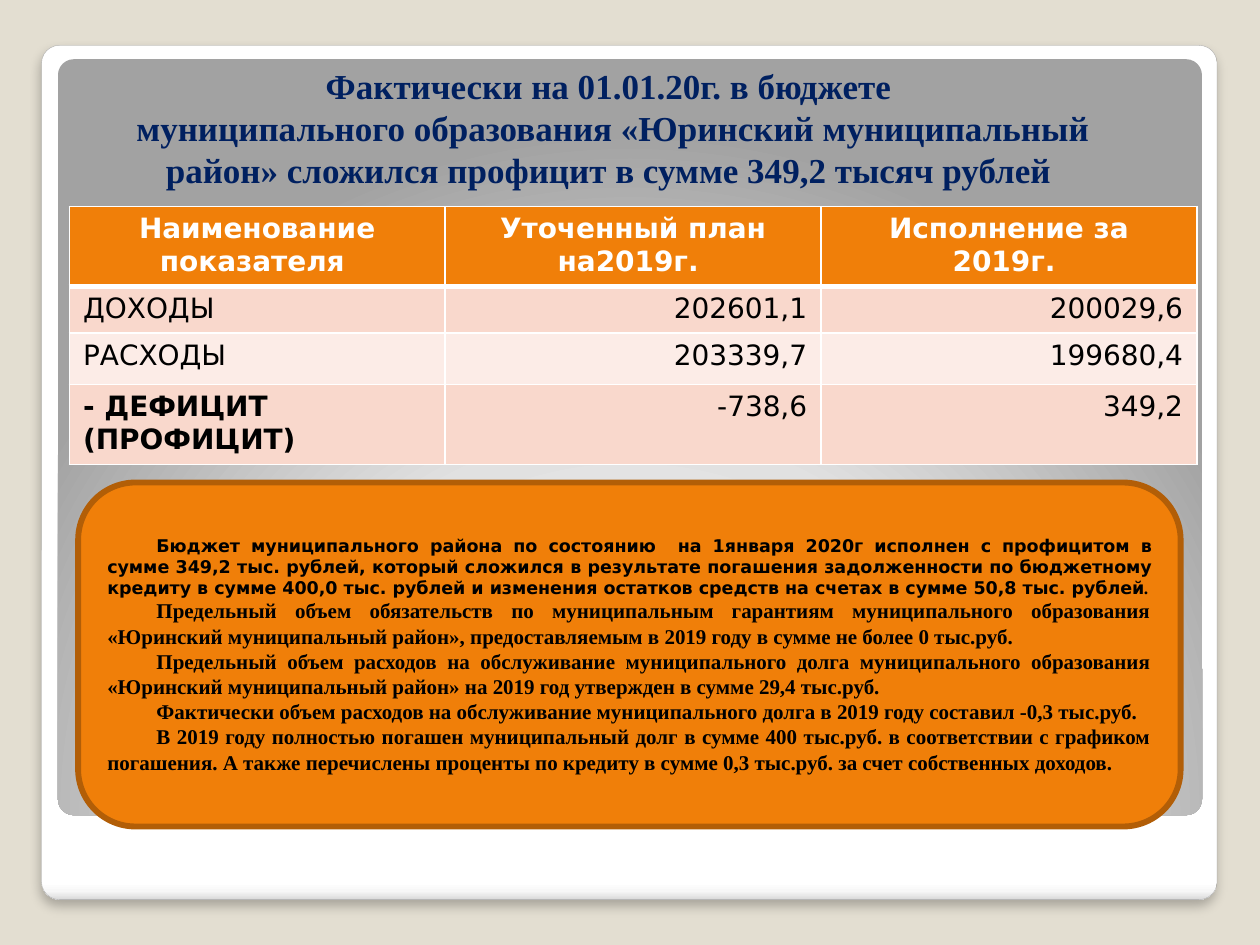
from lxml import etree
from pptx import Presentation
from pptx import util as u
from pptx.dml.color import RGBColor
from pptx.enum import shapes, text
from pptx.oxml import parse_xml
from pptx.oxml.ns import nsdecls, qn

COLORS = {
    "backdrop": "E3DED1", "white": "FFFFFF", "black": "000000", "navy": "002060",
    "orange": "F07F09", "rust": "B25E07", "band": "F9D8CC", "pale": "FCECE7",
    "edge": "A4A4A4",
}
SERIF, SANS = "Times New Roman", "DejaVu Sans"
LEFT, CENTER = text.PP_ALIGN.LEFT, text.PP_ALIGN.CENTER
RIGHT, JUSTIFY = text.PP_ALIGN.RIGHT, text.PP_ALIGN.JUSTIFY

TITLE = ("Фактически на 01.01.20г. в бюджете \nмуниципального образования «Юринский "
         "муниципальный район» сложился профицит в сумме 349,2 тысяч рублей ")
BUDGET = [
    ["Наименование показателя ", "Уточенный план на2019г. ", "Исполнение за 2019г. "],
    ["ДОХОДЫ", "202601,1", "200029,6"],
    ["РАСХОДЫ", "203339,7", "199680,4"],
    ["- ДЕФИЦИТ\n(ПРОФИЦИТ)", "-738,6", "349,2"],
]
ROW_HEIGHTS = [0.63, 0.37, 0.41, 0.63]
ROW_FILLS = ["orange", "band", "pale", "band"]
SUMMARY = (
    "Бюджет муниципального района по состоянию  на 1января 2020г исполнен с профицитом "
    "в сумме 349,2 тыс. рублей, который сложился в результате погашения задолженности по "
    "бюджетному кредиту в сумме 400,0 тыс. рублей и изменения остатков средств на счетах "
    "в сумме 50,8 тыс. рублей")
DEBT_NOTES = [
    "Предельный объем обязательств по муниципальным гарантиям муниципального образования "
    "«Юринский муниципальный район», предоставляемым в 2019 году в сумме не более 0 тыс.руб.",
    "Предельный объем расходов на обслуживание муниципального долга муниципального "
    "образования «Юринский муниципальный район» на 2019 год утвержден в сумме 29,4 тыс.руб. ",
    "Фактически объем расходов на обслуживание муниципального долга в 2019 году "
    "составил -0,3 тыс.руб.",
    "В 2019 году полностью погашен муниципальный долг в сумме 400 тыс.руб. в соответствии "
    "с графиком погашения. А также перечислены проценты по кредиту в сумме 0,3 тыс.руб. "
    "за счет собственных доходов. ",
]


def rgb(name):
    return RGBColor.from_string(COLORS[name])


def write(paragraph, words, size=12, font=SERIF, color="black", bold=True,
          align=LEFT, indent=0):
    paragraph.alignment = align
    if indent:
        properties = paragraph._p.get_or_add_pPr()
        properties.set("marL", "0")
        properties.set("indent", str(u.Inches(indent)))
    for number, line in enumerate(words.split("\n")):
        if number:
            paragraph.add_line_break()
        run = paragraph.add_run()
        run.text = line
        run.font.size = u.Pt(size)
        run.font.name = font
        run.font.bold = bold
        run.font.color.rgb = rgb(color)


def add_rounded(slide, left, top, width, height, corner=None):
    panel = slide.shapes.add_shape(
        shapes.MSO_SHAPE.ROUNDED_RECTANGLE,
        u.Inches(left), u.Inches(top), u.Inches(width), u.Inches(height))
    panel.shadow.inherit = False
    panel.line.fill.background()
    if corner is not None:
        panel.adjustments[0] = corner
    return panel


def fill_gradient(panel, stops, direction):
    panel.fill.background()
    marks = "".join(f'<a:gs pos="{place * 1000}"><a:srgbClr val="{shade}"/></a:gs>'
                    for place, shade in stops)
    gradient = parse_xml(f'<a:gradFill {nsdecls("a")} rotWithShape="1">'
                         f'<a:gsLst>{marks}</a:gsLst>{direction}</a:gradFill>')
    blank = panel._element.spPr.find(qn("a:noFill"))
    blank.getparent().replace(blank, gradient)


def drop_shadow(panel, blur, distance, opacity):
    effects = panel._element.spPr.find(qn("a:effectLst"))
    effects.append(parse_xml(
        f'<a:outerShdw {nsdecls("a")} blurRad="{u.Pt(blur)}" dist="{u.Pt(distance)}" '
        f'dir="5400000" algn="t" rotWithShape="0"><a:srgbClr val="{COLORS["black"]}">'
        f'<a:alpha val="{opacity * 1000}"/></a:srgbClr></a:outerShdw>'))


def add_frame(slide):
    card = add_rounded(slide, 0.33, 0.36, 9.33, 6.78, 0.021)
    fill_gradient(card, [(0, "FFFFFF"), (98, "FFFFFF"), (99, "F7F7F7"), (100, "DADADA")],
                  '<a:lin ang="5400000" scaled="0"/>')
    card.line.color.rgb = rgb("edge")
    card.line.width = u.Pt(0.16)
    drop_shadow(card, 6, 4, 25)
    panel = add_rounded(slide, 0.46, 0.47, 9.08, 6, 0.021)
    fill_gradient(panel, [(0, "FFFFFF"), (55, "E1E1E1"), (100, "A2A2A2")],
                  '<a:path path="circle"><a:fillToRect l="50000" t="175000" '
                  'r="50000" b="-75000"/></a:path>')


def add_title(slide):
    frame = slide.shapes.add_textbox(
        u.Inches(0.78), u.Inches(0.39), u.Inches(8.17), u.Inches(1.17)).text_frame
    frame.word_wrap = True
    frame.vertical_anchor = text.MSO_ANCHOR.BOTTOM
    write(frame.paragraphs[0], TITLE, size=20, color="navy", align=CENTER)


def set_borders(cell, **widths):
    properties = cell._tc.get_or_add_tcPr()
    for place, side in enumerate(["lnL", "lnR", "lnT", "lnB"]):
        border = etree.Element(qn(f"a:{side}"), w=str(u.Pt(widths.get(side, 1))))
        paint = etree.SubElement(border, qn("a:solidFill"))
        etree.SubElement(paint, qn("a:srgbClr"), val=COLORS["white"])
        properties.insert(place, border)


def add_budget_table(slide):
    table = slide.shapes.add_table(
        len(BUDGET), 3, u.Inches(0.55), u.Inches(1.64), u.Inches(8.95),
        u.Inches(sum(ROW_HEIGHTS))).table
    for r, (values, height, shade) in enumerate(zip(BUDGET, ROW_HEIGHTS, ROW_FILLS)):
        table.rows[r].height = u.Inches(height)
        for c, value in enumerate(values):
            cell = table.cell(r, c)
            cell.margin_left = cell.margin_right = u.Inches(0.11)
            cell.fill.solid()
            cell.fill.fore_color.rgb = rgb(shade)
            set_borders(cell, lnT=3 if r == 1 else 1, lnB=3 if r == 0 else 1)
            header, total = r == 0, r == len(BUDGET) - 1
            for number, line in enumerate(value.split("\n")):
                frame = cell.text_frame
                paragraph = frame.add_paragraph() if number else frame.paragraphs[0]
                write(paragraph, line, size=16, font=SANS,
                      color="white" if header else "black",
                      bold=header or (total and c == 0),
                      align=CENTER if header else RIGHT if c else LEFT)


def add_explanation(slide):
    panel = add_rounded(slide, 0.62, 3.83, 8.75, 2.73)
    panel.fill.solid()
    panel.fill.fore_color.rgb = rgb("orange")
    panel.line.color.rgb = rgb("rust")
    panel.line.width = u.Pt(3.35)
    frame = panel.text_frame
    frame.word_wrap = True
    frame.vertical_anchor = text.MSO_ANCHOR.MIDDLE
    body = {"align": JUSTIFY, "indent": 0.39}
    write(frame.paragraphs[0], SUMMARY, size=10, font=SANS, **body)
    write(frame.paragraphs[0], ".", size=10, **body)
    for note in DEBT_NOTES:
        write(frame.add_paragraph(), note, **body)


def main():
    deck = Presentation()
    deck.slide_width, deck.slide_height = u.Inches(10), u.Inches(7.5)
    slide = deck.slides.add_slide(deck.slide_layouts[6])
    slide.background.fill.solid()
    slide.background.fill.fore_color.rgb = rgb("backdrop")
    add_frame(slide)
    add_title(slide)
    add_budget_table(slide)
    add_explanation(slide)
    deck.save("out.pptx")


if __name__ == "__main__":
    main()
